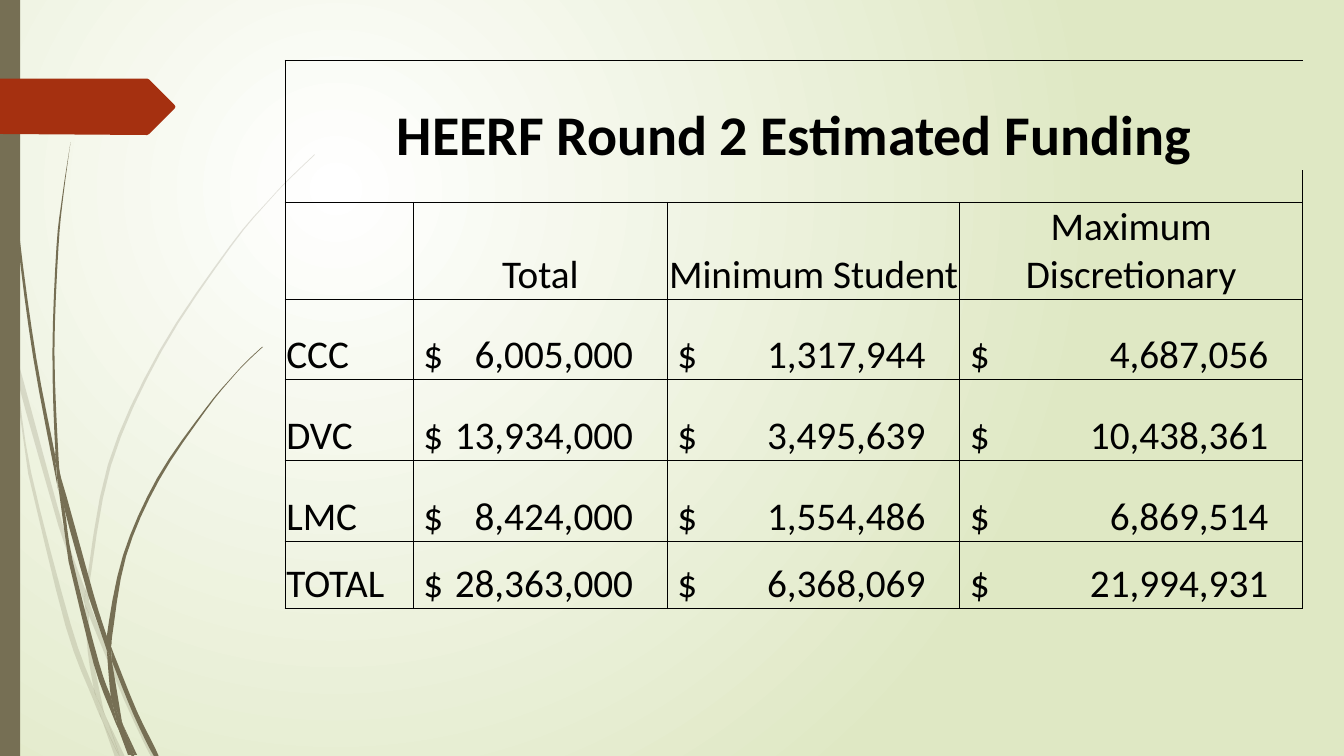
from lxml.etree import SubElement
from pptx import Presentation
from pptx.dml.color import RGBColor
from pptx.enum.shapes import MSO_SHAPE
from pptx.enum.text import MSO_ANCHOR, PP_ALIGN
from pptx.oxml import parse_xml
from pptx.oxml.ns import qn
from pptx.util import Cm, Pt

# Content: table
TITLE = "HEERF Round 2 Estimated Funding"
HEADERS = ["", "Total", "Minimum Student", "Maximum Discretionary"]
FUNDING = [
    ("CCC", "6,005,000", "1,317,944", "4,687,056"),
    ("DVC", "13,934,000", "3,495,639", "10,438,361"),
    ("LMC", "8,424,000", "1,554,486", "6,869,514"),
    ("TOTAL", "28,363,000", "6,368,069", "21,994,931"),
]
COL_WIDTHS = [1.27, 2.52, 2.9, 3.4]
ROW_HEIGHTS = [1.09, 0.3, 0.96, 0.8, 0.8, 0.8, 0.67]
TABLE_LEFT, TABLE_TOP = 2.83, 0.6
INDENT, TAB_INSET = 0.1, 0.44

# Content: colours
OLIVE, RED, BLACK = "766F54", "A53010", "000000"
BG_CENTRE, BG_EDGE = "FFFFFF", "DFE8C4"

# Content: grass blades in inches, each piece an outward and a return edge
PALE_GRASS = [
    ([(.11, 3.5), (.09, 3.22), (0, 2.82)], [(0, 2.99), (.1, 3.44), (.11, 3.5)]),
    ([(.58, 5.22), (.84, 5.99)],
     [(.85, 5.86), (.62, 5.2), (.14, 3.45), (.17, 3.76), (.58, 5.22)]),
    ([(.92, 6.07), (.88, 5.96)],
     [(.88, 6.1), (1.23, 6.94), (1.5, 7.51), (1.55, 7.51), (1.27, 6.92), (.92, 6.07)]),
    ([(1.19, 7.51), (1.24, 7.51)], [(1.05, 7.11), (1.19, 7.51)]),
    ([(.93, 6.83), (.7, 6.19), (.31, 4.69), (.17, 3.76), (.11, 3.5)],
     [(.28, 4.7), (.65, 6.21), (.92, 6.93), (1.01, 7.14), (.99, 7.07), (.93, 6.83)]),
    ([(.84, 5.99), (.87, 6.46), (.93, 6.83), (.96, 6.92), (1.05, 7.11)],
     [(1.03, 7.06), (.91, 6.46), (.88, 6.1), (.88, 6.08), (.84, 5.99)]),
    ([(.88, 5.84), (1.1, 4.62), (1.6, 3.49), (2.29, 2.45), (2.68, 1.98), (2.9, 1.75),
      (3.12, 1.54)],
     [(3.12, 1.53), (2.89, 1.75), (2.68, 1.97), (2.28, 2.44), (1.58, 3.48), (1.07, 4.61),
      (.85, 5.84), (.85, 5.86), (.88, 5.96), (.88, 5.84)]),
    ([(1.01, 7.14), (1.14, 7.51)], [(1.19, 7.51), (1.01, 7.14)]),
    ([(.88, 6.08), (.88, 6.1), (.88, 5.96)], [(.85, 5.86), (.84, 5.99), (.88, 6.08)]),
    ([(.96, 6.92), (.93, 6.83)],
     [(.99, 7.07), (1.01, 7.14), (1.19, 7.51), (1.05, 7.11), (.96, 6.92)]),
]
DARK_GRASS = [
    ([(.07, 1.1), (.17, 2.33), (.33, 3.55), (.56, 4.77), (.57, 4.81)],
     [(.55, 4.57), (.55, 4.53), (.36, 3.55), (.19, 2.32), (.08, 1.09), (.05, .48), (.04, 0),
      (.03, 0), (.04, .48), (.07, 1.1)]),
    ([(.88, 5.92), (1.06, 6.45)],
     [(1.06, 6.33), (1.06, 6.31), (.93, 5.9), (.6, 4.72), (.64, 5.05), (.88, 5.92)]),
    ([(1.13, 6.49), (1.1, 6.41)],
     [(1.11, 6.56), (1.32, 7.08), (1.52, 7.49), (1.57, 7.49), (1.36, 7.06), (1.13, 6.49)]),
    ([(1.1, 6.91), (.98, 6.57), (.72, 5.56), (.64, 5.05), (.57, 4.77)],
     [(.68, 5.57), (.93, 6.59), (1.11, 7.08), (1.17, 7.22), (1.16, 7.17), (1.1, 6.91)]),
    ([(.6, 4.72), (.58, 4.53), (.54, 3.49), (.58, 2.45), (.63, 1.93), (.7, 1.41)],
     [(.7, 1.41), (.62, 1.93), (.56, 2.45), (.52, 3.49), (.55, 4.49), (.6, 4.72)]),
    ([(1.33, 7.49), (1.36, 7.49)], [(1.22, 7.19), (1.33, 7.49)]),
    ([(.57, 4.77), (.64, 5.05)],
     [(.6, 4.72), (.55, 4.49), (.55, 4.53), (.57, 4.77)]),
    ([(1.11, 6.33), (1.25, 5.52), (1.58, 4.76), (2.05, 4.06), (2.31, 3.74), (2.45, 3.59),
      (2.61, 3.44)],
     [(2.6, 3.44), (2.45, 3.58), (2.31, 3.73), (2.04, 4.05), (1.56, 4.74), (1.22, 5.51),
      (1.06, 6.31), (1.1, 6.41), (1.11, 6.33)]),
    ([(1.17, 7.22), (1.27, 7.49)], [(1.31, 7.49), (1.17, 7.22)]),
    ([(1.06, 6.45), (1.1, 6.91), (1.16, 7.06), (1.22, 7.19)],
     [(1.21, 7.16), (1.11, 6.56), (1.09, 6.51), (1.06, 6.45)]),
    ([(1.06, 6.45), (1.09, 6.51), (1.11, 6.56)],
     [(1.1, 6.41), (1.06, 6.31), (1.06, 6.33), (1.06, 6.45)]),
    ([(1.16, 7.06), (1.1, 6.91)],
     [(1.16, 7.17), (1.17, 7.22), (1.3, 7.49), (1.33, 7.49), (1.22, 7.19), (1.16, 7.06)]),
]
ARROW = [(0, .78), (1.46, .78), (1.48, .79), (1.73, 1.04), (1.74, 1.06), (1.73, 1.08),
         (1.48, 1.33), (1.46, 1.34), (0, 1.33)]


def inches(n):
    return Cm(n * 2.54)


def rgb(value):
    return RGBColor.from_string(value)


def paint(sp, color, alpha=None):
    sp.shadow.inherit = False
    sp.fill.solid()
    sp.fill.fore_color.rgb = rgb(color)
    sp.line.fill.background()
    if alpha:
        clr = sp.fill._xPr.find(qn("a:solidFill"))[0]
        SubElement(clr, qn("a:alpha"), val=str(alpha * 1000))
    return sp


def outline(shapes, points, color, alpha=None):
    pts = [(inches(x), inches(y)) for x, y in points]
    fb = shapes.build_freeform(*pts[0], scale=1.0)
    fb.add_line_segments(pts[1:], close=True)
    return paint(fb.convert_to_shape(), color, alpha)


def smooth(edge):
    """Catmull-Rom curve through the points of an edge."""
    pts = [edge[0], *edge, edge[-1]]
    curve = []
    for quad in zip(pts, pts[1:], pts[2:], pts[3:]):
        for t in (0, .25, .5, .75):
            curve.append(tuple(
                b + t * ((c - a) + t * ((2 * a - 5 * b + 4 * c - d)
                                        + t * (3 * b - a - 3 * c + d))) / 2
                for a, b, c, d in zip(*quad)))
    return curve + [edge[-1]]


def write(cell, text, size=28, bold=False, align=PP_ALIGN.LEFT, indent=0.01, tab=None):
    cell.vertical_anchor = MSO_ANCHOR.BOTTOM
    cell.margin_left = inches(indent)
    cell.margin_right = cell.margin_top = inches(0.01)
    cell.margin_bottom = 0
    p = cell.text_frame.paragraphs[0]
    p.alignment = align
    if tab:
        tabs = SubElement(p._p.get_or_add_pPr(), qn("a:tabLst"))
        SubElement(tabs, qn("a:tab"), pos=str(inches(tab)), algn="r")
    if text:
        r = p.add_run()
        r.text = text
        r.font.name, r.font.size, r.font.bold = "Calibri", Pt(size), bold
        r.font.color.rgb = rgb(BLACK)


def border(cell, widths):
    """Widths in points for left, right, top and bottom; 0 hides the side."""
    cell.fill.background()
    tcPr = cell._tc.get_or_add_tcPr()
    for i, (side, width) in enumerate(zip("LRTB", widths)):
        ln = SubElement(tcPr, qn("a:ln" + side), w=str(Pt(width)))
        if width:
            SubElement(SubElement(ln, qn("a:solidFill")), qn("a:srgbClr"), val=BLACK)
        else:
            SubElement(ln, qn("a:noFill"))
        tcPr.insert(i, ln)


prs = Presentation()
prs.slide_width, prs.slide_height = inches(13.33), inches(7.5)
s = prs.slides.add_slide(prs.slide_layouts[6])

# Background: circular gradient
s.background.fill.solid()
bgPr = s.background.fill._xPr
bgPr.replace(bgPr[0], parse_xml(
    '<a:gradFill xmlns:a="http://schemas.openxmlformats.org/drawingml/2006/main"><a:gsLst>'
    f'<a:gs pos="0"><a:srgbClr val="{BG_CENTRE}"/></a:gs>'
    f'<a:gs pos="100000"><a:srgbClr val="{BG_EDGE}"/></a:gs></a:gsLst>'
    '<a:path path="circle"><a:fillToRect l="50000" t="50000" r="100000" b="100000"/>'
    '</a:path></a:gradFill>'))

# Grass, side bar and arrow
for grass, alpha in ((PALE_GRASS, 20), (DARK_GRASS, None)):
    s.shapes.add_group_shape([
        outline(s.shapes, smooth(out) + smooth(back), OLIVE, alpha) for out, back in grass])
paint(s.shapes.add_shape(MSO_SHAPE.RECTANGLE, 0, 0, inches(0.2), prs.slide_height), OLIVE)
outline(s.shapes, ARROW, RED)

# Table frame
n_rows, n_cols = len(ROW_HEIGHTS), len(COL_WIDTHS)
table = s.shapes.add_table(n_rows, n_cols, inches(TABLE_LEFT), inches(TABLE_TOP),
                           inches(sum(COL_WIDTHS)), inches(sum(ROW_HEIGHTS))).table
table.first_row = table.horz_banding = False
for col, width in zip(table.columns, COL_WIDTHS):
    col.width = inches(width)
for row, height in zip(table.rows, ROW_HEIGHTS):
    row.height = inches(height)
for i in range(n_rows):
    inner = 0 if i < 2 else 0.5
    for j in range(n_cols):
        border(table.cell(i, j), (
            inner if j else 1, inner if j < n_cols - 1 else 1,
            (1, 0)[i] if i < 2 else 0.5, 0 if i == 0 else 1 if i == n_rows - 1 else 0.5))

# Table text
table.cell(0, 0).merge(table.cell(0, n_cols - 1))
write(table.cell(0, 0), TITLE, size=40, bold=True, align=PP_ALIGN.CENTER)
for j, header in enumerate(HEADERS):
    write(table.cell(1, j), "")
    write(table.cell(2, j), header, align=PP_ALIGN.CENTER)
for i, (college, *amounts) in enumerate(FUNDING, 3):
    write(table.cell(i, 0), college)
    for j, amount in enumerate(amounts, 1):
        write(table.cell(i, j), "$\t" + amount, indent=INDENT, tab=COL_WIDTHS[j] - TAB_INSET)

prs.save("out.pptx")
